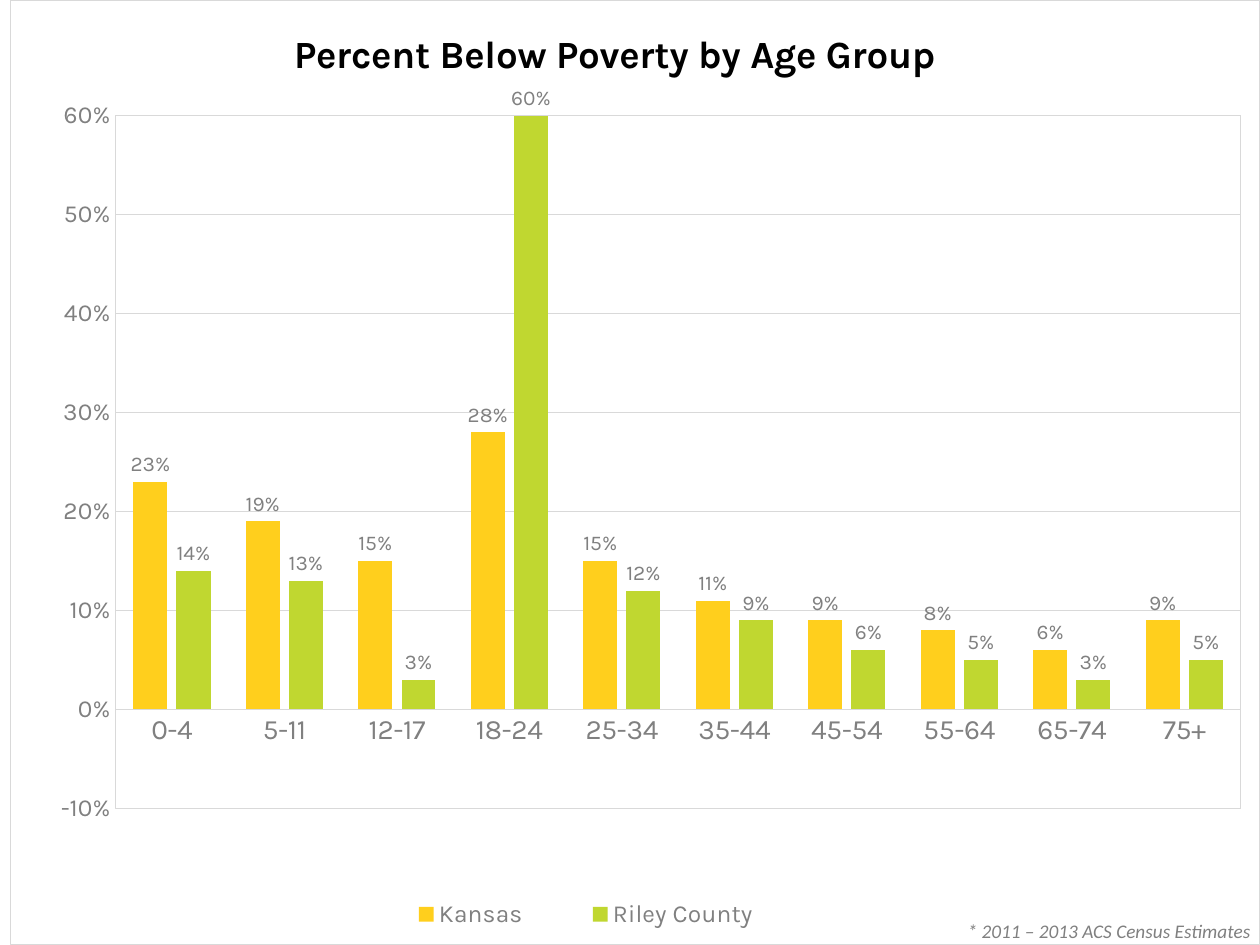
from dataclasses import dataclass

from pptx import Presentation
from pptx.chart.data import CategoryChartData
from pptx.dml.color import RGBColor
from pptx.enum.chart import XL_CHART_TYPE as ChartType
from pptx.enum.chart import XL_LABEL_POSITION as LabelPosition
from pptx.enum.chart import XL_LEGEND_POSITION as LegendPosition
from pptx.enum.chart import XL_TICK_MARK as TickMark
from pptx.enum.text import MSO_AUTO_SIZE as AutoSize
from pptx.oxml import parse_xml
from pptx.oxml.ns import nsdecls
from pptx.util import Pt


@dataclass(frozen=True)
class Theme:
    chart_font: str = "Karla"
    note_font: str = "Calibri"
    black: str = "000000"
    gray: str = "808080"
    rule: str = "D9D9D9"
    series: tuple = ("FFCF1D", "C0D730")
    title_size: int = 22
    category_size: int = 16
    axis_size: int = 14
    label_size: int = 12
    note_size: int = 11
    base_size: int = 10
    rule_width: float = 0.75


CHART_WIDTH, CHART_HEIGHT = 714.2, 540
AGE_GROUPS = ("0-4", "5-11", "12-17", "18-24", "25-34",
              "35-44", "45-54", "55-64", "65-74", "75+")
POVERTY = {
    "Kansas": (0.23, 0.19, 0.15, 0.28, 0.15, 0.11, 0.09, 0.08, 0.06, 0.09),
    "Riley County": (0.14, 0.13, 0.03, 0.6, 0.12, 0.09, 0.06, 0.05, 0.03, 0.05),
}


class SlideBuilder:
    def __init__(self, slide, theme):
        self.slide = slide
        self.theme = theme

    def style_font(self, font, size, color, name=None, bold=False, italic=False):
        font.size = Pt(size)
        font.color.rgb = RGBColor.from_string(color)
        font.name = name or self.theme.chart_font
        font.bold = bold
        font.italic = italic

    def style_rule(self, line):
        line.color.rgb = RGBColor.from_string(self.theme.rule)
        line.width = Pt(self.theme.rule_width)

    def frame(self):
        return parse_xml(
            f'<c:spPr {nsdecls("c", "a")}><a:noFill/>'
            f'<a:ln w="{Pt(self.theme.rule_width)}"><a:solidFill>'
            f'<a:srgbClr val="{self.theme.rule}"/></a:solidFill></a:ln></c:spPr>')

    def place(self, element, index, inner=False, **points):
        for layout in element.xpath("c:layout"):
            element.remove(layout)
        target = '<c:layoutTarget val="inner"/>' if inner else ""
        modes = "".join(f'<c:{key}Mode val="edge"/>' for key in "xy")
        spans = {"x": CHART_WIDTH, "w": CHART_WIDTH, "y": CHART_HEIGHT, "h": CHART_HEIGHT}
        values = "".join(f'<c:{key} val="{value / spans[key]}"/>'
                         for key, value in points.items())
        element.insert(index, parse_xml(
            f'<c:layout {nsdecls("c")}><c:manualLayout>{target}{modes}{values}'
            f'</c:manualLayout></c:layout>'))

    def note(self, text, left, top, width, height):
        box = self.slide.shapes.add_textbox(Pt(left), Pt(top), Pt(width), Pt(height))
        frame = box.text_frame
        frame.word_wrap = False
        frame.auto_size = AutoSize.SHAPE_TO_FIT_TEXT
        frame.margin_right = Pt(0)
        frame.text = text
        span = frame.paragraphs[0].runs[0]
        self.style_font(span.font, self.theme.note_size, self.theme.gray,
                        self.theme.note_font, italic=True)

    def column_chart(self, title, categories, series, left, top):
        data = CategoryChartData(number_format="0%")
        data.categories = categories
        for name, values in series.items():
            data.add_series(name, values)
        chart = self.slide.shapes.add_chart(
            ChartType.COLUMN_CLUSTERED, Pt(left), Pt(top),
            Pt(CHART_WIDTH), Pt(CHART_HEIGHT), data).chart
        self.style_font(chart.font, self.theme.base_size, self.theme.black)
        self.style_title(chart, title)
        self.style_axes(chart)
        self.style_columns(chart.plots[0])
        self.style_legend(chart)
        plot_area = chart.element.xpath("c:chart/c:plotArea")[0]
        self.place(plot_area, 0, inner=True, x=60, y=65.9, w=643.5, h=396.4)
        plot_area.append(self.frame())
        chart.element.xpath("c:chart")[0].addnext(self.frame())

    def style_title(self, chart, text):
        chart.has_title = True
        chart.chart_title.text_frame.text = text
        chart.chart_title.include_in_layout = False
        span = chart.chart_title.text_frame.paragraphs[0].runs[0]
        self.style_font(span.font, self.theme.title_size, self.theme.black, bold=True)
        self.place(chart.element.xpath("c:chart/c:title")[0], 1, x=158, y=12.2)

    def style_axes(self, chart):
        ages, shares = chart.category_axis, chart.value_axis
        for axis, size in ((ages, self.theme.category_size), (shares, self.theme.axis_size)):
            axis.major_tick_mark = axis.minor_tick_mark = TickMark.NONE
            self.style_font(axis.tick_labels.font, size, self.theme.gray)
        self.style_rule(ages.format.line)
        shares.format.line.fill.background()
        shares.minimum_scale, shares.maximum_scale, shares.major_unit = -0.1, 0.6, 0.1
        shares.tick_labels.number_format = "0%"
        shares.tick_labels.number_format_is_linked = False
        shares.has_major_gridlines = True
        self.style_rule(shares.major_gridlines.format.line)

    def style_columns(self, plot):
        plot.gap_width, plot.overlap = 104, -27
        plot.vary_by_categories = False
        for series, color in zip(plot.series, self.theme.series):
            series.format.fill.solid()
            series.format.fill.fore_color.rgb = RGBColor.from_string(color)
            series.invert_if_negative = False
            labels = series.data_labels
            labels.show_value = True
            labels.number_format = "0%"
            labels.number_format_is_linked = False
            labels.position = LabelPosition.OUTSIDE_END
            self.style_font(labels.font, self.theme.label_size, self.theme.gray)

    def style_legend(self, chart):
        chart.has_legend = True
        chart.legend.position = LegendPosition.BOTTOM
        chart.legend.include_in_layout = False
        self.style_font(chart.legend.font, self.theme.axis_size, self.theme.gray)
        self.place(chart.element.xpath("c:chart/c:legend")[0], 1,
                   x=198, y=509.3, w=262, h=27)


def main():
    deck = Presentation()
    deck.slide_width, deck.slide_height = Pt(720), Pt(540)
    page = SlideBuilder(deck.slides.add_slide(deck.slide_layouts[6]), Theme())
    page.note("* 2011 – 2013 ACS Census Estimates", 545.8, 522, 174.2, 18)
    page.column_chart("Percent Below Poverty by Age Group", AGE_GROUPS, POVERTY, 5.8, 0)
    deck.save("out.pptx")


if __name__ == "__main__":
    main()
